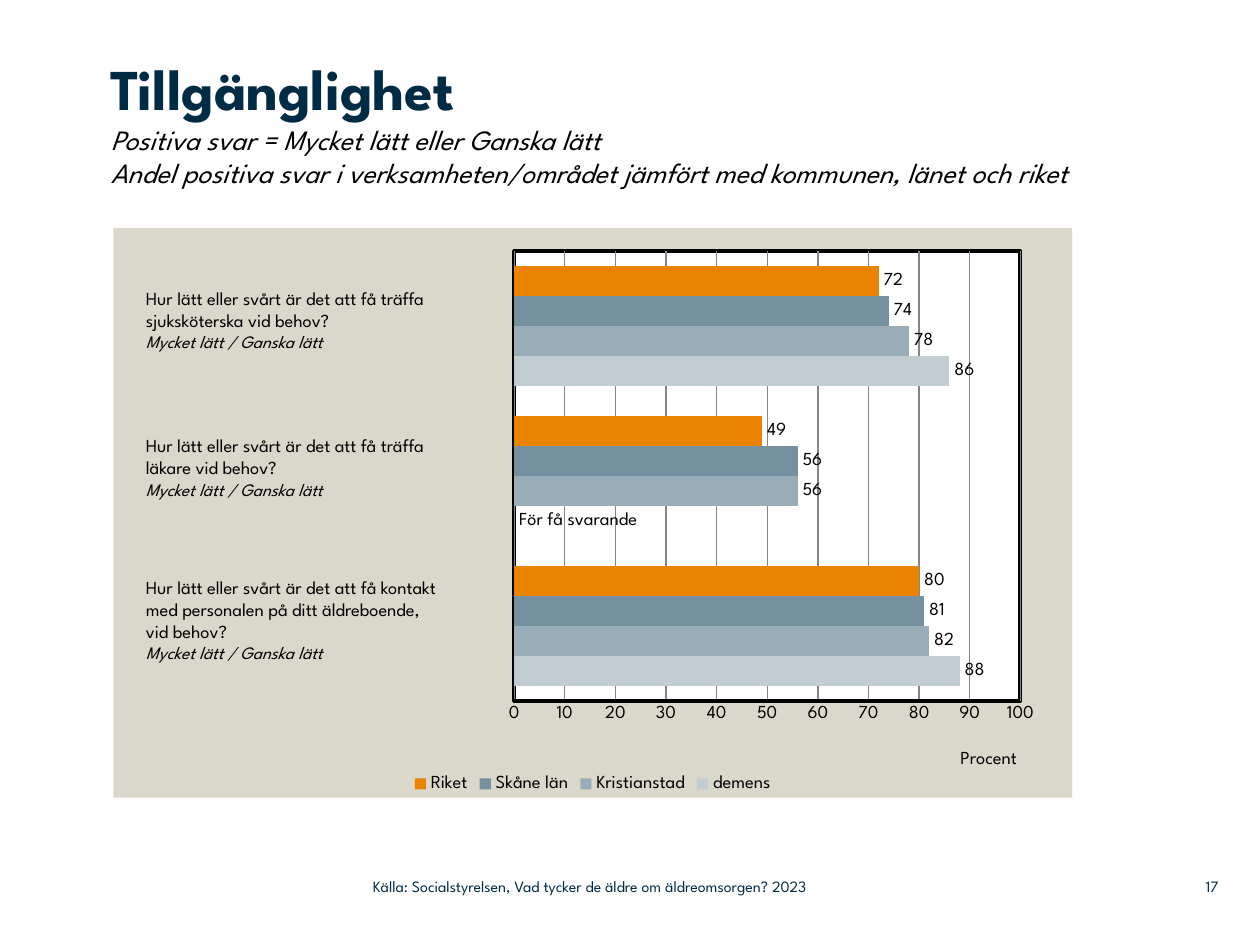
import pptx
import pptx.chart.data
import pptx.dml.color
import pptx.enum.chart
import pptx.enum.text
import pptx.oxml
import pptx.oxml.ns
import pptx.util

Inches = pptx.util.Inches
Pt = pptx.util.Pt
RGBColor = pptx.dml.color.RGBColor
ALIGN = pptx.enum.text.PP_ALIGN
ANCHOR = pptx.enum.text.MSO_ANCHOR
KINDS = pptx.enum.chart

FONT = "League Spartan"
NAVY = RGBColor(0x00, 0x2B, 0x45)
BLACK = RGBColor(0x00, 0x00, 0x00)
WHITE = RGBColor(0xFF, 0xFF, 0xFF)
SAND = RGBColor(0xDA, 0xD7, 0xCB)
GRAY = RGBColor(0x86, 0x86, 0x86)
ORANGE = RGBColor(0xE9, 0x83, 0x00)
STEEL = RGBColor(0x75, 0x90, 0x9F)
MIST = RGBColor(0x99, 0xAD, 0xB9)
PALE = RGBColor(0xC2, 0xCD, 0xD3)

SERIES = [
    ("demens", (88, 0, 86), PALE),
    ("Kristianstad", (82, 56, 78), MIST),
    ("Skåne län", (81, 56, 74), STEEL),
    ("Riket", (80, 49, 72), ORANGE),
]
ANSWER = "Mycket lätt / Ganska lätt"
ASKED = [
    ((1.06, 2.23, 2.99, 0.81),
     ["Hur lätt eller svårt är det att få träffa sjuksköterska vid behov?"]),
    ((1.06, 3.4, 2.93, 0.81),
     ["Hur lätt eller svårt är det att få träffa", "läkare vid behov?"]),
    ((1.06, 4.52, 3.01, 0.98),
     ["Hur lätt eller svårt är det att få kontakt",
      "med personalen på ditt äldreboende,", "vid behov?"]),
]


def style(font, size=10.5, color=BLACK, bold=False, italic=False):
    """Set the face, size and colour of a font."""
    font.name = FONT
    font.size = Pt(size)
    font.color.rgb = color
    font.bold = bold
    font.italic = italic


def add_text(slide, box, paras, inset=None, align=ALIGN.LEFT,
             anchor=ANCHOR.TOP, **base):
    """Add a text box whose paragraphs are lists of (text, format) runs."""
    frame = slide.shapes.add_textbox(*map(Inches, box)).text_frame
    frame.word_wrap = True
    frame.vertical_anchor = anchor
    if inset is not None:
        frame.margin_left = frame.margin_right = Inches(inset)
        frame.margin_top = frame.margin_bottom = Inches(inset)
    for num, runs in enumerate(paras):
        para = frame.add_paragraph() if num else frame.paragraphs[0]
        para.alignment = align
        for pos, (words, extra) in enumerate(runs):
            if pos:
                para.add_line_break()
            run = para.add_run()
            run.text = words
            style(run.font, **{**base, **extra})


def make_layout(x, y, w=None, h=None):
    """Return a manual chart layout given in shares of the chart."""
    parts = [("xMode", "edge"), ("yMode", "edge"), ("x", x), ("y", y)]
    if w:
        parts.insert(0, ("layoutTarget", "inner"))
        parts += [("w", w), ("h", h)]
    body = "".join(f'<c:{tag} val="{val}"/>' for tag, val in parts)
    space = pptx.oxml.ns.nsdecls("c")
    return pptx.oxml.parse_xml(
        f"<c:layout {space}><c:manualLayout>{body}</c:manualLayout></c:layout>")


def set_layout(node, layout, index):
    """Put a layout in a chart node in place of any old one."""
    for old in node.findall(pptx.oxml.ns.qn("c:layout")):
        node.remove(old)
    node.insert(index, layout)


def frame_plot(area):
    """Fill the plot area white with a black border."""
    space = pptx.oxml.ns.nsdecls("c", "a")
    area.append(pptx.oxml.parse_xml(
        f'<c:spPr {space}><a:solidFill><a:srgbClr val="{WHITE}"/></a:solidFill>'
        f'<a:ln w="{Pt(2.25)}"><a:solidFill><a:srgbClr val="{BLACK}"/>'
        "</a:solidFill></a:ln></c:spPr>"))


def fill_chart(space_node):
    """Fill the chart ground with sand and no border."""
    space = pptx.oxml.ns.nsdecls("c", "a")
    ground = pptx.oxml.parse_xml(
        f'<c:spPr {space}><a:solidFill><a:srgbClr val="{SAND}"/></a:solidFill>'
        "<a:ln><a:noFill/></a:ln></c:spPr>")
    space_node.find(pptx.oxml.ns.qn("c:chart")).addnext(ground)


def style_axes(chart):
    """Hide the category axis and set up the percent axis."""
    chart.category_axis.visible = False
    axis = chart.value_axis
    axis.minimum_scale, axis.maximum_scale, axis.major_unit = 0, 100, 10
    axis.major_tick_mark = KINDS.XL_TICK_MARK.NONE
    axis.minor_tick_mark = KINDS.XL_TICK_MARK.NONE
    axis.format.line.color.rgb = BLACK
    axis.format.line.width = Pt(2)
    grid = axis.major_gridlines.format.line
    grid.color.rgb = GRAY
    grid.width = Pt(0.75)
    style(axis.tick_labels.font)
    title = axis.axis_title
    run = title.text_frame.paragraphs[0].add_run()
    run.text = "Procent"
    style(run.font)
    set_layout(title._element, make_layout(0.88, 0.91), 1)


def style_bars(plot):
    """Colour each series and show its values."""
    plot.gap_width = 100
    plot.overlap = 0
    plot.vary_by_categories = False
    for bars, (_, _, color) in zip(plot.series, SERIES):
        bars.format.fill.solid()
        bars.format.fill.fore_color.rgb = color
        bars.invert_if_negative = False
        labels = bars.data_labels
        labels.show_value = True
        labels.position = KINDS.XL_LABEL_POSITION.OUTSIDE_END
        style(labels.font)
    label = plot.series[0].points[1].data_label
    run = label.text_frame.paragraphs[0].add_run()
    run.text = "För få svarande"
    style(run.font)
    label.position = KINDS.XL_LABEL_POSITION.OUTSIDE_END


def add_bars(slide, box):
    """Add the bar chart of positive answers."""
    data = pptx.chart.data.CategoryChartData()
    data.categories = ["1", "2", "3"]
    for name, vals, _ in SERIES:
        data.add_series(name, vals)
    chart = slide.shapes.add_chart(
        KINDS.XL_CHART_TYPE.BAR_CLUSTERED, *map(Inches, box), data).chart
    style(chart.font)
    chart.has_title = False
    chart.has_legend = True
    chart.legend.position = KINDS.XL_LEGEND_POSITION.BOTTOM
    chart.legend.include_in_layout = False
    style(chart.legend.font)
    style_axes(chart)
    style_bars(chart.plots[0])
    area = chart._chartSpace.chart.plotArea
    set_layout(area, make_layout(0.418, 0.041, 0.528, 0.789), 0)
    frame_plot(area)
    fill_chart(chart._chartSpace)


def main():
    """Build and save the slide."""
    deck = pptx.Presentation()
    deck.slide_width, deck.slide_height = Inches(10), Inches(7.5)
    slide = deck.slides.add_slide(deck.slide_layouts[6])
    add_bars(slide, (0.9, 1.81, 7.61, 4.52))
    add_text(slide, (0.88, 0.42, 7.77, 1.39), [[
        ("Tillgänglighet", dict(size=33, color=NAVY, bold=True, italic=False)),
        ("Positiva svar = Mycket lätt eller Ganska lätt", {}),
        ("Andel positiva svar i verksamheten/området jämfört med kommunen, "
         "länet och riket", {}),
    ]], inset=0, size=16, italic=True)
    for box, lines in ASKED:
        paras = [[(line, {})] for line in lines]
        paras.append([(ANSWER, dict(size=10, italic=True))])
        add_text(slide, box, paras)
    foot = dict(inset=0, anchor=ANCHOR.MIDDLE, size=9, color=NAVY)
    add_text(slide, (9.2, 6.89, 0.47, 0.29), [[("17", {})]],
             align=ALIGN.RIGHT, **foot)
    add_text(slide, (2.96, 6.89, 4.43, 0.29), [[
        ("Källa: Socialstyrelsen, Vad tycker de äldre om äldreomsorgen? 2023",
         {})]], **foot)
    deck.save("out.pptx")


if __name__ == "__main__":
    main()
